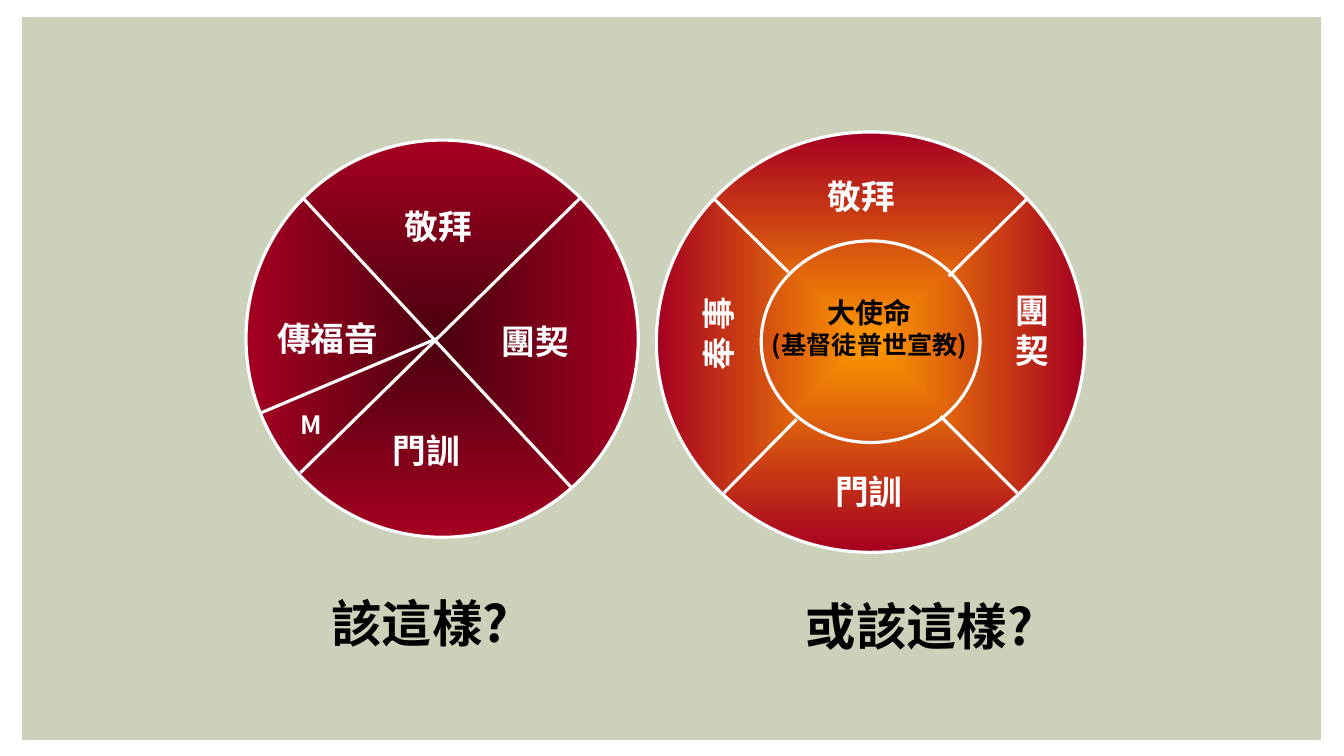
"""Build a slide that compares two models of church life as ring diagrams."""
from dataclasses import dataclass
from typing import Optional

from lxml.etree import SubElement as Sub
from pptx import Presentation
from pptx.dml.color import RGBColor as Rgb
from pptx.enum.shapes import MSO_CONNECTOR as Link, MSO_SHAPE as Kind
from pptx.enum.text import MSO_AUTO_SIZE as Fit, PP_ALIGN as Align
from pptx.oxml.ns import qn
from pptx.util import Inches, Pt

FONT = "Noto Sans CJK SC"
HUES = {"page": "CCD1B9", "white": "FFFFFF", "black": "000000",
        "dark": "4C000F", "red": "A50021", "gold": "FF9900"}
Box = tuple[float, float, float, float]


@dataclass(frozen=True)
class Disc:
    box: Box
    core: Optional[str] = None


@dataclass(frozen=True)
class Label:
    box: Box
    lines: tuple[str, ...]
    sizes: tuple[int, ...] = (24,)
    hue: str = "white"
    align: Align = Align.CENTER
    pad: float = 0.1
    turn: int = 0
    vert: str = "horz"


DISCS = (
    Disc((2.44, 1.39, 3.89, 3.94), "dark"),
    Disc((6.51, 1.31, 4.25, 4.17), "gold"),
    Disc((7.55, 2.39, 2.17, 2)),
)
SPOKES: tuple[Box, ...] = (
    (3.01, 1.97, 5.67, 4.84),
    (5.75, 1.97, 2.98, 4.69),
    (4.33, 3.36, 2.58, 4.1),
    (7.09, 1.98, 7.82, 2.7),
    (10.18, 1.98, 9.41, 2.74),
    (10.09, 4.89, 9.33, 4.13),
    (7.18, 4.89, 7.9, 4.16),
)
LABELS = (
    Label((3.59, 1.99, 1.51, 0.51), ("敬拜",)),
    Label((2.5, 3.1, 1.5, 0.51), ("傳福音",)),
    Label((2.88, 4.01, 0.41, 0.4), ("M",), (18,), align=Align.LEFT),
    Label((3.44, 4.22, 1.58, 0.5), ("門訓",)),
    Label((4.33, 3.13, 1.5, 0.51), ("團契",), pad=0.56),
    Label((2.58, 5.83, 3.17, 0.7), ("該這樣?",), (36,), "black"),
    Label((7.45, 2.88, 2.35, 0.74), ("大使命", "(基督徒普世宣教)"),
          (20, 18), "black"),
    Label((7.45, 1.7, 2.19, 0.5), ("敬拜",)),
    Label((9.72, 3.08, 1.01, 0.5), ("團契",), turn=90, vert="vert270"),
    Label((6.61, 3.13, 1.01, 0.5), ("事奉",), turn=270, vert="eaVert"),
    Label((7.22, 4.62, 2.79, 0.5), ("門訓",)),
    Label((7.62, 5.85, 3, 0.71), ("或該這樣?",), (36,), "black"),
)


def tint(name: str) -> Rgb:
    """Return the named colour."""
    return Rgb.from_string(HUES[name])


def put_page(slide) -> None:
    """Draw the tinted panel behind the diagrams."""
    page = slide.shapes.add_shape(
        Kind.RECTANGLE, *map(Inches, (0.22, 0.17, 12.88, 7.17)))
    page.shadow.inherit = False
    page.fill.solid()
    page.fill.fore_color.rgb = tint("page")
    page.line.fill.background()


def put_disc(slide, disc: Disc) -> None:
    """Draw an outlined ellipse, shaded from its core when it has one."""
    oval = slide.shapes.add_shape(Kind.OVAL, *map(Inches, disc.box))
    oval.shadow.inherit = False
    oval.line.color.rgb = tint("white")
    oval.line.width = Pt(2.25)
    if disc.core is None:
        oval.fill.background()
        return
    oval.fill.gradient()
    for stop, hue in zip(oval.fill.gradient_stops, (disc.core, "red")):
        stop.color.rgb = tint(hue)
    grad = oval.element.spPr.find(qn("a:gradFill"))
    grad.remove(grad.find(qn("a:lin")))
    way = Sub(grad, qn("a:path"), {"path": "shape"})
    Sub(way, qn("a:fillToRect"), {side: "50000" for side in "ltrb"})


def put_spoke(slide, ends: Box) -> None:
    """Draw a white dividing line."""
    line = slide.shapes.add_connector(Link.STRAIGHT, *map(Inches, ends))
    line.line.color.rgb = tint("white")
    line.line.width = Pt(2.25)
    Sub(line.element.spPr, qn("a:effectLst"))


def put_label(slide, label: Label) -> None:
    """Write a bold label of one or more lines."""
    box = slide.shapes.add_textbox(*map(Inches, label.box))
    box.rotation = label.turn
    frame = box.text_frame
    frame.word_wrap = True
    frame.auto_size = Fit.SHAPE_TO_FIT_TEXT
    frame.margin_left = Inches(label.pad)
    box.element.txBody.bodyPr.set("vert", label.vert)
    frame.text = "\n".join(label.lines)
    for para, size in zip(frame.paragraphs, label.sizes):
        para.alignment = label.align
        font = para.font
        font.name, font.size, font.bold = FONT, Pt(size), True
        font.color.rgb = tint(label.hue)
        for prop in para._p.iter(qn("a:defRPr")):
            Sub(prop, qn("a:ea"), {"typeface": FONT})


def main() -> None:
    """Build and save the slide."""
    deck = Presentation()
    deck.slide_width, deck.slide_height = Inches(13.33), Inches(7.5)
    slide = deck.slides.add_slide(deck.slide_layouts[6])
    put_page(slide)
    for disc in DISCS:
        put_disc(slide, disc)
    for ends in SPOKES:
        put_spoke(slide, ends)
    for label in LABELS:
        put_label(slide, label)
    deck.save("out.pptx")


if __name__ == "__main__":
    main()
